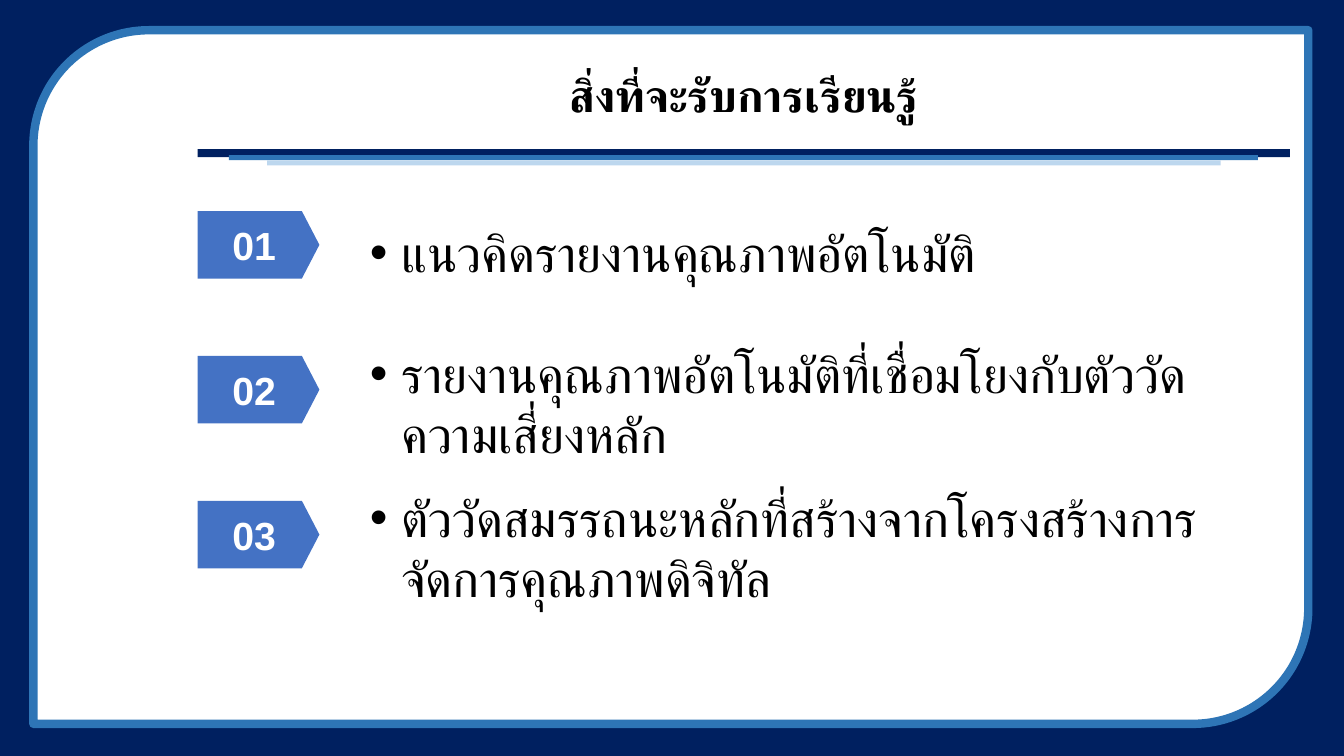
from lxml import etree
from pptx import Presentation
from pptx.dml.color import RGBColor
from pptx.enum.shapes import MSO_SHAPE
from pptx.enum.text import MSO_ANCHOR, MSO_AUTO_SIZE, PP_ALIGN
from pptx.oxml.ns import qn
from pptx.util import Cm, Pt

RECT = MSO_SHAPE.RECTANGLE
FRAME = MSO_SHAPE.ROUND_2_DIAG_RECTANGLE
TAG = MSO_SHAPE.PENTAGON
CENTER = PP_ALIGN.CENTER
MIDDLE = MSO_ANCHOR.MIDDLE
NO_FIT = MSO_AUTO_SIZE.NONE
GROW = MSO_AUTO_SIZE.SHAPE_TO_FIT_TEXT

COLORS = {
    "navy": "002060",
    "blue": "2E75B6",
    "pale": "BDD7EE",
    "tag": "4472C4",
    "white": "FFFFFF",
    "black": "000000",
}


class Deck:
    """Holds the style and the slide being built."""

    heading_font = "Arial"
    body_font = "Calibri"
    bullet_indent = Cm(0.79)

    def __init__(self, slide):
        self.slide = slide

    def color(self, name):
        return RGBColor.from_string(COLORS[name])

    def style(self, paragraph, font, size, color, bold=False):
        paragraph.font.name = font
        paragraph.font.size = Pt(size)
        paragraph.font.bold = bold
        paragraph.font.color.rgb = self.color(color)

    def panel(self, kind, box, fill, line=None, width=0):
        shape = self.slide.shapes.add_shape(kind, *map(Cm, box))
        shape.shadow.inherit = False
        shape.fill.solid()
        shape.fill.fore_color.rgb = self.color(fill)
        if line:
            shape.line.color.rgb = self.color(line)
            shape.line.width = Pt(width)
        else:
            shape.line.fill.background()
        return shape

    def title(self, text, box):
        title = self.slide.shapes.title
        title.left, title.top, title.width, title.height = map(Cm, box)
        # Bring the title in front of the frame
        self.slide.shapes._spTree.append(title._element)
        frame = title.text_frame
        frame.text = text
        frame.word_wrap = True
        frame.auto_size = NO_FIT
        frame.vertical_anchor = MIDDLE
        heading = frame.paragraphs[0]
        heading.alignment = CENTER
        heading.line_spacing = 0.9
        self.style(heading, self.heading_font, 32, "black", bold=True)

    def number_tag(self, text, box):
        tag = self.panel(TAG, box, "tag")
        tag.adjustments[0] = 0.26
        frame = tag.text_frame
        frame.text = text
        frame.vertical_anchor = MIDDLE
        number = frame.paragraphs[0]
        number.alignment = CENTER
        self.style(number, self.heading_font, 28, "white", bold=True)

    def bullet(self, text, box):
        frame = self.slide.shapes.add_textbox(*map(Cm, box)).text_frame
        frame.word_wrap = True
        frame.auto_size = GROW
        frame.text = text
        topic = frame.paragraphs[0]
        props = topic._p.get_or_add_pPr()
        props.set("marL", str(self.bullet_indent))
        props.set("indent", str(-self.bullet_indent))
        etree.SubElement(props, qn("a:buFont")).set("typeface", "Arial")
        etree.SubElement(props, qn("a:buChar")).set("char", "•")
        self.style(topic, self.body_font, 36, "black")


def main():
    prs = Presentation()
    prs.slide_width, prs.slide_height = Cm(33.87), Cm(19.05)
    deck = Deck(prs.slides.add_slide(prs.slide_layouts[5]))

    # Background and frame
    deck.panel(RECT, (0, 0, 33.87, 19.05), "navy")
    frame = deck.panel(FRAME, (0.84, 0.76, 32.13, 17.48), "white", "blue", 6)
    frame.rotation = 180

    # Layered rule under the title
    rules = [
        ((4.98, 3.76, 27.53, 0.2), "navy"),
        ((5.77, 3.91, 25.93, 0.13), "blue"),
        ((6.73, 4.04, 24.03, 0.13), "pale"),
    ]
    for box, color in rules:
        deck.panel(RECT, box, color)

    deck.title("สิ่งที่จะรับการเรียนรู้", (4.98, 1.24, 27.53, 2.46))

    # Numbered topics: text, top and height of its box
    topics = [
        ("แนวคิดรายงานคุณภาพอัตโนมัติ", 5.46, 1.8),
        ("รายงานคุณภาพอัตโนมัติที่เชื่อมโยงกับตัววัดความเสี่ยงหลัก", 8.51, 1.8),
        ("ตัววัดสมรรถนะหลักที่สร้างจากโครงสร้างการจัดการคุณภาพดิจิทัล", 12.14, 3.33),
    ]
    first_tag, tag_step = 5.32, 3.65
    for index, (topic, top, height) in enumerate(topics):
        tag_top = first_tag + index * tag_step
        deck.number_tag(f"{index + 1:02}", (4.98, tag_top, 3.07, 1.7))
        deck.bullet(topic, (9.07, top, 22.71, height))

    prs.save("out.pptx")


if __name__ == "__main__":
    main()
